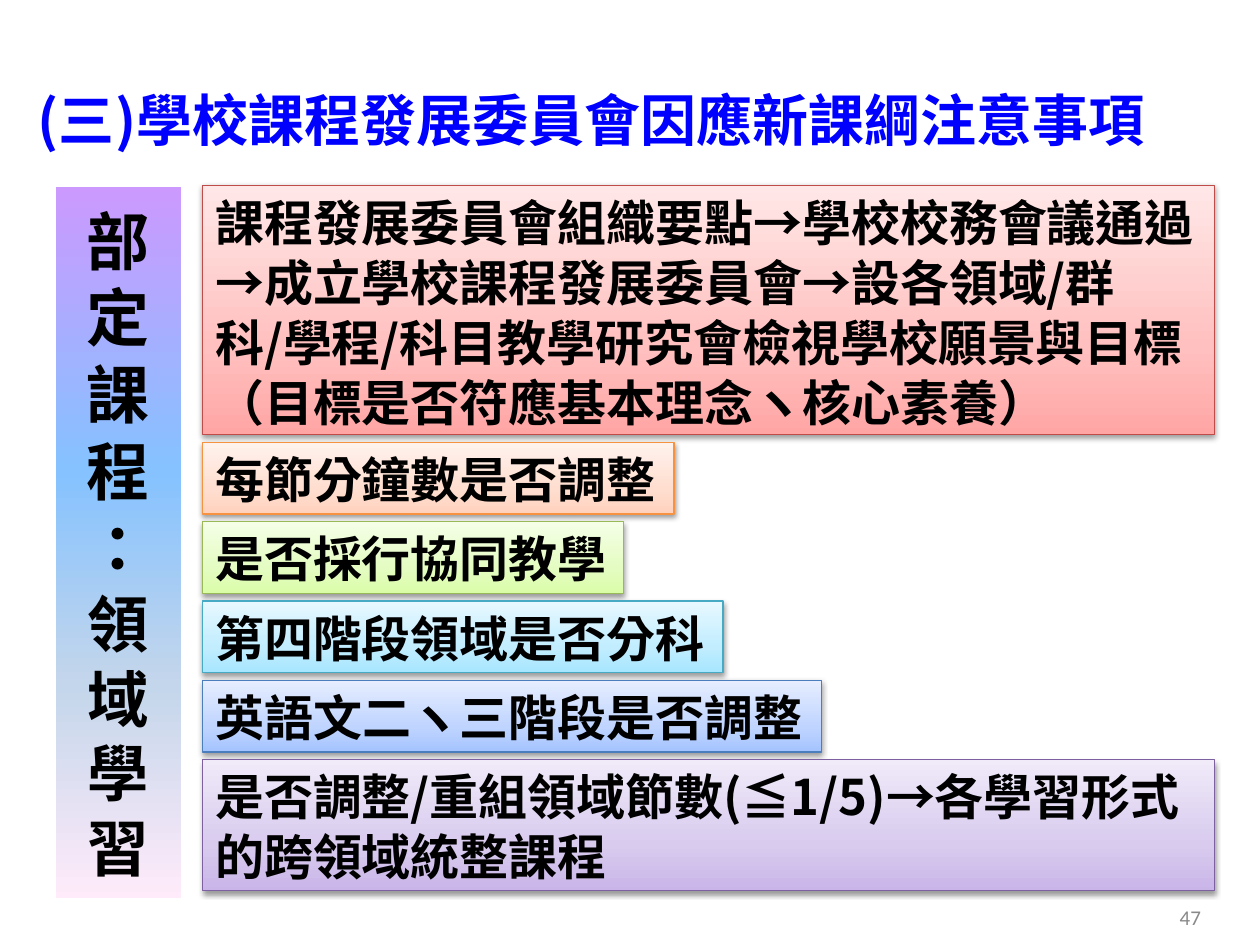
from lxml import etree
from pptx import Presentation
from pptx.dml.color import RGBColor
from pptx.enum import shapes, text
from pptx.oxml import ns
from pptx.util import Inches, Pt

CJK = "Noto Sans CJK SC"
BLACK = RGBColor(0, 0, 0)
BLUE = RGBColor(0, 0, 0xFF)
GREY = RGBColor(0x89, 0x89, 0x89)
WHITE = RGBColor(0xFF, 0xFF, 0xFF)
LEADING = 1.22  # line pitch relative to the font size

BAR_STOPS = [(0, "CC99FF"), (40, "85C2FF"), (70, "C4D6EB"), (100, "FFEBFA")]
BAR_TEXT = [("部定課程\v：", 36), ("領域", 35), ("學習", 35)]

# text, width, height, line colour, gradient colours from bottom to top
ITEMS = [
    ("課程發展委員會組織要點→學校校務會議通過→成立學校課程發展委員會→設各領域/群科/學程/科目教學研究會"
     "檢視學校願景與目標（目標是否符應基本理念ヽ核心素養）",
     8.03, 1.98, RGBColor(0xBF, 0x4C, 0x48), ("FFA6A5", "FFC0BF", "FFE7E7")),
    ("每節分鐘數是否調整",
     3.74, 0.57, RGBColor(0xF6, 0x92, 0x40), ("FFD2BD", "FFDED0", "FFF2ED")),
    ("是否採行協同教學",
     3.34, 0.57, RGBColor(0x98, 0xB9, 0x55), ("DAFDA7", "E4FCC2", "F5FFE7")),
    ("第四階段領域是否分科",
     4.13, 0.57, RGBColor(0x46, 0xAA, 0xC5), ("A7E6FF", "C1EDFF", "E7F8FF")),
    ("英語文二ヽ三階段是否調整",
     4.91, 0.57, RGBColor(0x4B, 0x7E, 0xBC), ("A4C4FF", "BFD4FF", "E6EEFF")),
    ("是否調整/重組領域節數(≦1/5)→各學習形式的跨領域統整課程",
     8.03, 1.04, RGBColor(0x7D, 0x60, 0xA0), ("C9B5E8", "D8CBEE", "F0EAF9")),
]


def write(p, content, size=28, color=BLACK, bold=True, font=CJK,
          align=text.PP_ALIGN.LEFT):
    """Fill one paragraph; a vertical tab makes a line break."""
    p.alignment = align
    p.line_spacing = Pt(round(size * LEADING, 1))
    for i, part in enumerate(content.split("\v")):
        if i:
            p.add_line_break()
        r = p.add_run()
        r.text = part
        r.font.size, r.font.bold, r.font.name = Pt(size), bold, font
        r.font.color.rgb = color
        rPr = r.font._element
        rPr.set("lang", "zh-TW")
        rPr.find(ns.qn("a:latin")).addnext(
            etree.Element(ns.qn("a:ea"), typeface=font))


def gradient(sp, stops, angle):
    """Give a shape a linear gradient with any number of stops."""
    sp.fill.gradient()
    grad = sp._element.spPr.find(ns.qn("a:gradFill"))
    for child in list(grad):
        grad.remove(child)
    gs_list = etree.SubElement(grad, ns.qn("a:gsLst"))
    for pos, color in stops:
        gs = etree.SubElement(gs_list, ns.qn("a:gs"), pos=str(pos * 1000))
        etree.SubElement(gs, ns.qn("a:srgbClr"), val=color)
    etree.SubElement(grad, ns.qn("a:lin"), ang=str(angle * 60000), scaled="0")


def soft_shadow(sp):
    effects = sp._element.spPr.find(ns.qn("a:effectLst"))
    shadow = etree.SubElement(effects, ns.qn("a:outerShdw"), blurRad="40000",
                              dist="20000", dir="5400000", rotWithShape="0")
    color = etree.SubElement(shadow, ns.qn("a:srgbClr"), val="000000")
    etree.SubElement(color, ns.qn("a:alpha"), val="38000")


def add_panel(slide, box, stops, angle, line, line_width, anchor):
    sp = slide.shapes.add_shape(shapes.MSO_SHAPE.RECTANGLE, *map(Inches, box))
    sp.shadow.inherit = False
    gradient(sp, stops, angle)
    sp.line.color.rgb = line
    sp.line.width = Pt(line_width)
    sp.text_frame.word_wrap = True
    sp.text_frame.vertical_anchor = anchor
    return sp


def add_title(slide, box):
    title = slide.shapes.title
    title.left, title.top, title.width, title.height = map(Inches, box)
    title.text_frame.vertical_anchor = text.MSO_ANCHOR.MIDDLE
    write(title.text_frame.paragraphs[0],
          "(三)學校課程發展委員會因應新課綱注意事項", size=32, color=BLUE)


def add_side_bar(slide, box):
    sp = add_panel(slide, box, BAR_STOPS, 90, WHITE, 2, text.MSO_ANCHOR.MIDDLE)
    tf = sp.text_frame
    for i, (content, size) in enumerate(BAR_TEXT):
        p = tf.add_paragraph() if i else tf.paragraphs[0]
        write(p, content, size=size, align=text.PP_ALIGN.CENTER)


def add_items(slide, left, top, gap):
    for content, width, height, line, colors in ITEMS:
        sp = add_panel(slide, (left, top, width, height),
                       zip((0, 35, 100), colors), 270, line, 0.75,
                       text.MSO_ANCHOR.TOP)
        soft_shadow(sp)
        write(sp.text_frame.paragraphs[0], content)
        top += height + gap


def add_page_number(slide, box):
    tf = slide.shapes.add_textbox(*map(Inches, box)).text_frame
    tf.word_wrap = True
    tf.vertical_anchor = text.MSO_ANCHOR.MIDDLE
    write(tf.paragraphs[0], "47", size=12, color=GREY, bold=False,
          font="Calibri", align=text.PP_ALIGN.RIGHT)


def main():
    prs = Presentation()
    prs.slide_width, prs.slide_height = Inches(10), Inches(7.5)
    s = prs.slides.add_slide(prs.slide_layouts[5])
    add_title(s, (0.2, 0.52, 9.8, 0.85))
    add_page_number(s, (7.3, 7.08, 2.33, 0.4))
    add_side_bar(s, (0.43, 1.47, 1.02, 5.67))
    add_items(s, left=1.61, top=1.47, gap=0.06)
    prs.save("out.pptx")


if __name__ == "__main__":
    main()
